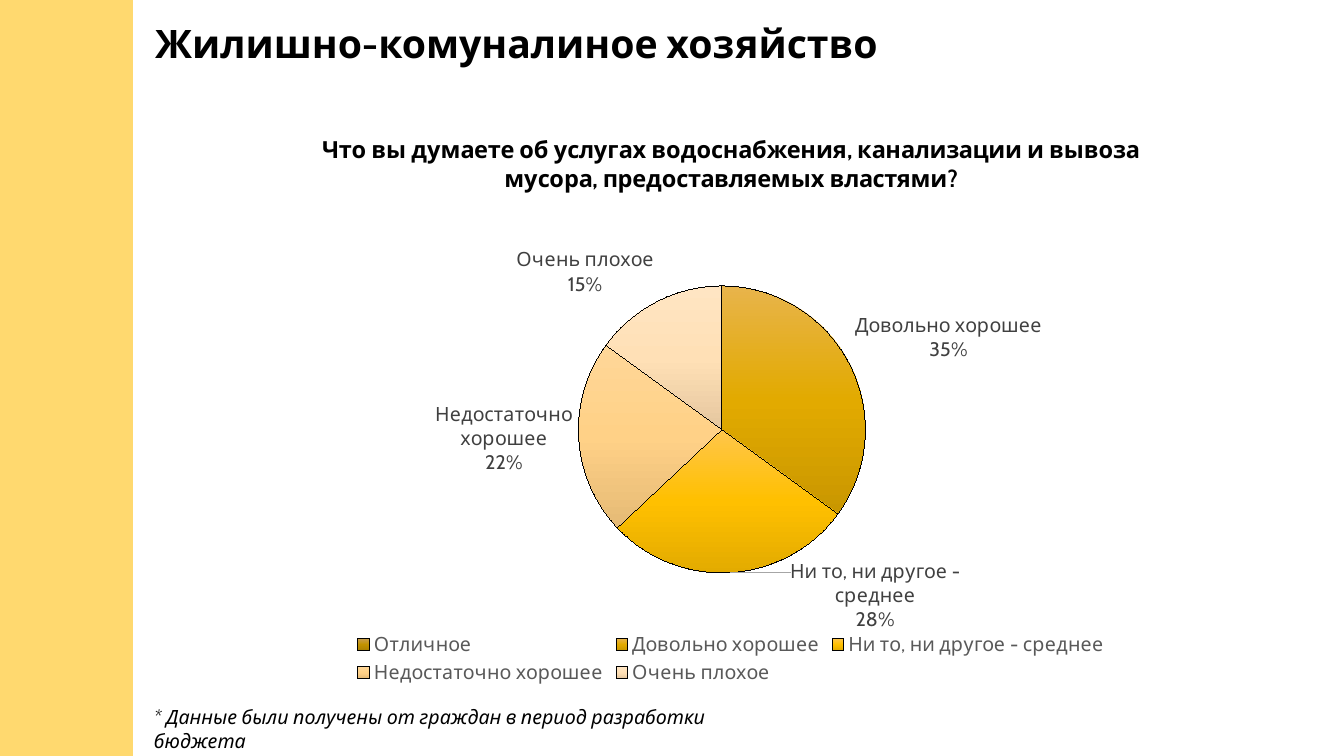
import pptx
import pptx.chart.data
import pptx.dml.color
import pptx.enum.chart
import pptx.enum.shapes
import pptx.enum.text
import pptx.oxml
import pptx.oxml.ns
import pptx.util

SCALE = 914400 / 100.8  # EMU in one px
COLORS = {"band": "FFD96F", "text": "000000", "label": "404040",
          "legend": "595959", "leader": "A6A6A6"}
ANSWERS = [  # answer, percent, gradient from top to bottom
    ("Отличное", 0, ("C99E4B", "C19200", "AC8100")),
    ("Довольно хорошее", 35, ("E8B44B", "E2AA00", "C99700")),
    ("Ни то, ни другое - среднее", 28, ("FFC64B", "FFC000", "E3AB00")),
    ("Недостаточно хорошее", 22, ("FFD798", "FFD187", "E5BA75")),
    ("Очень плохое", 15, ("FFE5C3", "FFE0B6", "E5C79F")),
]
EMPTY_ANSWER, MOVED_LABEL = 0, 2
CHART_WIDTH, CHART_HEIGHT = 1056, 576
QUESTION = ("Что вы думаете об услугах водоснабжения, канализации и вывоза "
            "мусора, предоставляемых властями?")


def px(*lengths):
    return [pptx.util.Emu(round(length * SCALE)) for length in lengths]


def rgb(name):
    return pptx.dml.color.RGBColor.from_string(COLORS[name])


def element(markup):
    """Parse markup whose root tag ends with {ns} for the namespaces."""
    return pptx.oxml.parse_xml(markup.replace("{ns}", pptx.oxml.ns.nsdecls("a", "c")))


def layout(lengths, **modes):
    """Place a chart part by px lengths, which the file holds as shares of the chart."""
    shares = {name: length / (CHART_WIDTH if name in "xw" else CHART_HEIGHT)
              for name, length in lengths.items()}
    parts = "".join(f'<c:{name} val="{value}"/>'
                    for name, value in {**modes, **shares}.items())
    return element(f"<c:layout {{ns}}><c:manualLayout>{parts}</c:manualLayout></c:layout>")


class SlideBuilder:
    font_name = "Cabin"

    def __init__(self, page):
        self.page = page

    def style(self, font, color="text", **values):
        font.color.rgb = rgb(color)
        for name, value in {"name": self.font_name, **values}.items():
            setattr(font, name, pptx.util.Pt(value) if name == "size" else value)

    def band(self, *place):
        shape = self.page.shapes.add_shape(
            pptx.enum.shapes.MSO_SHAPE.RECTANGLE, *px(*place))
        shape.shadow.inherit = False
        shape.fill.solid()
        shape.fill.fore_color.rgb = rgb("band")
        shape.line.fill.background()

    def text(self, place, spans, **values):
        """Add one paragraph made of (wording, size) spans."""
        frame = self.page.shapes.add_textbox(*px(*place)).text_frame
        frame.word_wrap = True
        frame.auto_size = pptx.enum.text.MSO_AUTO_SIZE.SHAPE_TO_FIT_TEXT
        for wording, size in spans:
            span = frame.paragraphs[0].add_run()
            span.text = wording
            self.style(span.font, size=size, **values)

    def pie(self, place, title, answers):
        data = pptx.chart.data.CategoryChartData()
        data.categories = [answer for answer, _, _ in answers]
        data.add_series("Series 1", [percent for _, percent, _ in answers])
        chart = self.page.shapes.add_chart(
            pptx.enum.chart.XL_CHART_TYPE.PIE, *px(*place), data).chart
        self.style(chart.font, size=14)

        chart.has_title = True
        chart.chart_title.include_in_layout = False
        span = chart.chart_title.text_frame.paragraphs[0].add_run()
        span.text = title
        self.style(span.font, size=16.8, bold=True)

        chart.has_legend = True
        chart.legend.position = pptx.enum.chart.XL_LEGEND_POSITION.BOTTOM
        chart.legend.include_in_layout = False
        self.style(chart.legend.font, "legend", size=14)

        plot = chart.plots[0]
        plot.vary_by_categories = True
        area = chart._chartSpace.chart.plotArea
        for old in area.findall(pptx.oxml.ns.qn("c:layout")):
            area.remove(old)
        area.insert(0, layout({"x": 361, "y": 173, "w": 316, "h": 287},
                              layoutTarget="inner", xMode="edge", yMode="edge"))
        self.slices(plot.series[0], [stops for _, _, stops in answers])
        self.labels(plot.series[0])

    def slices(self, series, gradients):
        for index, stops in enumerate(gradients):
            series.points[index].format.line.color.rgb = rgb("text")
            marks = "".join(
                f'<a:gs pos="{place * 50000}"><a:srgbClr val="{color}"/></a:gs>'
                for place, color in enumerate(stops))
            properties = series._element.get_or_add_dPt_for_point(index).get_or_add_spPr()
            properties.insert(0, element(
                f'<a:gradFill {{ns}} rotWithShape="1"><a:gsLst>{marks}</a:gsLst>'
                '<a:lin ang="5400000" scaled="0"/></a:gradFill>'))

    def labels(self, series):
        outside = pptx.enum.chart.XL_LABEL_POSITION.OUTSIDE_END
        labels = series.data_labels
        formats = {"show_value": False, "show_category_name": True,
                   "show_percentage": True, "number_format": "0%",
                   "number_format_is_linked": False, "position": outside}
        for name, value in formats.items():
            setattr(labels, name, value)
        self.style(labels.font, "label", size=14)

        moved = series.points[MOVED_LABEL].data_label
        self.style(moved.font, "label", size=14)
        moved.position = outside
        node = labels._element.find(pptx.oxml.ns.qn("c:dLbl"))
        node.insert(1, layout({"x": 144, "y": -19}))
        for name, shown in (("showVal", "0"), ("showCatName", "1"), ("showPercent", "1")):
            node.find(pptx.oxml.ns.qn("c:" + name)).set("val", shown)
        labels._element.insert(0, element(
            f'<c:dLbl {{ns}}><c:idx val="{EMPTY_ANSWER}"/><c:delete val="1"/></c:dLbl>'))
        labels._element.find(pptx.oxml.ns.qn("c:showLeaderLines")).addnext(element(
            '<c:leaderLines {ns}><c:spPr><a:ln><a:solidFill>'
            f'<a:srgbClr val="{COLORS["leader"]}"/>'
            '</a:solidFill></a:ln></c:spPr></c:leaderLines>'))


def main():
    deck = pptx.Presentation()
    deck.slide_width, deck.slide_height = px(1344, 756)
    builder = SlideBuilder(deck.slides.add_slide(deck.slide_layouts[6]))
    builder.band(0, 0, 133, 756)
    builder.text((144, 700, 666, 34),
                 [("* Данные были получены от граждан в период разработки бюджета", 14)],
                 italic=True)
    builder.text((134, 3, 1260, 72),
                 [(" ", 36), ("Жилишно-комуналиное хозяйство", 28)], bold=True)
    builder.pie((203, 113, CHART_WIDTH, CHART_HEIGHT), QUESTION, ANSWERS)
    deck.save("out.pptx")


if __name__ == "__main__":
    main()
